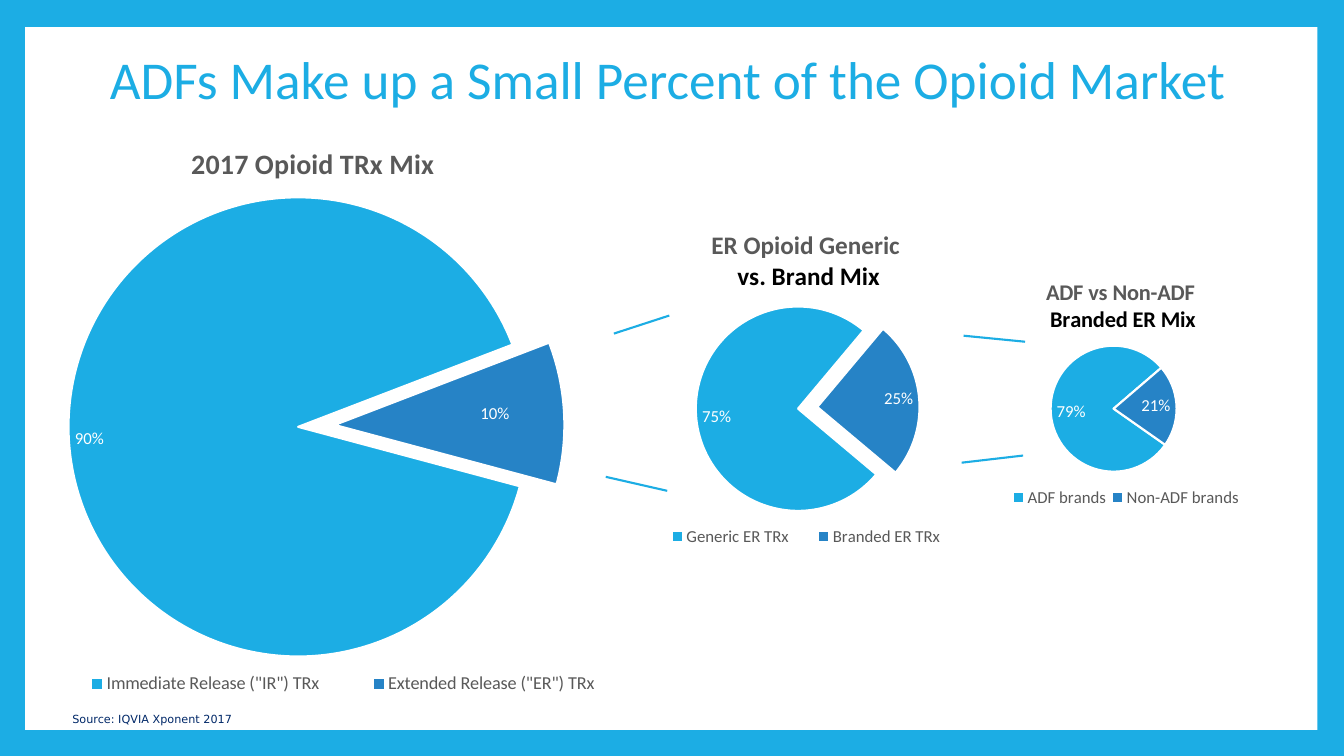
from pptx import Presentation
from pptx.chart.data import CategoryChartData as Data
from pptx.dml.color import RGBColor as Rgb
from pptx.enum.chart import XL_CHART_TYPE as Kind
from pptx.enum.chart import XL_LABEL_POSITION as Spot
from pptx.enum.chart import XL_LEGEND_POSITION as Side
from pptx.enum.shapes import MSO_CONNECTOR as Conn
from pptx.enum.shapes import MSO_SHAPE as Form
from pptx.enum.text import MSO_ANCHOR as Anchor
from pptx.enum.text import PP_ALIGN as Align
from pptx.oxml import parse_xml
from pptx.oxml.ns import nsdecls, qn
from pptx.util import Pt

HUES = {"sky": "1CADE4", "blue": "2683C6", "white": "FFFFFF",
        "grey": "595959", "black": "000000", "navy": "002868"}

# box: chart frame; mid, half: centre and radius of the pie;
# head, key: corner of the title and frame of the legend
PIES = [
    dict(box=(-22.3, 62.6, 496, 465.8), mid=(213, 305), half=164,
         head=(133, 99), key=(31, 477, 428, 23), key_size=13,
         title=["2017 Opioid TRx Mix"], size=20, start=105, burst=16,
         shift=-0.07, vals=(0.9, 0.1),
         cats=('Immediate Release ("IR") TRx', 'Extended Release ("ER") TRx')),
    dict(box=(443.5, 136.1, 254.2, 276.5), mid=(570, 292), half=73,
         head=(506, 161), key=(463, 373, 226, 21), key_size=12,
         title=["ER Opioid Generic ", "vs. Brand Mix"], size=18, start=130,
         burst=19, shift=0, vals=(0.75, 0.25),
         cats=("Generic ER TRx", "Branded ER TRx")),
    dict(box=(702, 182.9, 212.4, 189.4), mid=(795.5, 292), half=45,
         head=(745, 196), key=(719.5, 346, 170, 19), key_size=12,
         title=["ADF vs Non-ADF ", "Branded ER Mix"], size=16, start=125,
         burst=0, shift=0, vals=(0.79, 0.21),
         cats=("ADF brands", "Non-ADF brands")),
]

LINKS = [(438.5, 238.3, 478.1, 225.4), (432.7, 340.6, 476.6, 350.6),
         (688.3, 239.8, 732.2, 244.1), (686.9, 330.5, 730.8, 325.4)]


def rgb(name):
    return Rgb.from_string(HUES[name])


def style(font, hue, **form):
    font.color.rgb = rgb(hue)
    for key, val in {"name": "Calibri", **form}.items():
        setattr(font, key, val)


def tag(name, val):
    return parse_xml(f'<c:{name} {nsdecls("c")} val="{val}"/>')


def layout(marks):
    body = "".join(f'<c:{key} val="{val}"/>' for key, val in marks)
    return parse_xml(f'<c:layout {nsdecls("c")}><c:manualLayout>{body}'
                     "</c:manualLayout></c:layout>")


def place(part, box, area, after=None):
    """Fix a chart part at a slide area, given as fractions of the frame."""
    left, top, width, height = box
    marks = [("xMode", "edge"), ("yMode", "edge"),
             ("x", round((area[0] - left) / width, 4)),
             ("y", round((area[1] - top) / height, 4))]
    if len(area) == 4:
        marks += [("w", round(area[2] / width, 4)),
                  ("h", round(area[3] / height, 4))]
    if after is None:
        marks.insert(0, ("layoutTarget", "inner"))
    for old in part.findall(qn("c:layout")):
        part.remove(old)
    if after is None:
        part.insert(0, layout(marks))
    else:
        part.find(qn(after)).addnext(layout(marks))


def add_head(chart, pie):
    frame = chart.chart_title.text_frame
    for num, line in enumerate(pie["title"]):
        para = frame.add_paragraph() if num else frame.paragraphs[0]
        run = para.add_run()
        run.text = line
        style(run.font, "black" if num else "grey",
              size=Pt(pie["size"]), bold=True)
    chart.chart_title.include_in_layout = False


def add_key(chart, pie):
    chart.has_legend = True
    chart.legend.position = Side.BOTTOM
    chart.legend.include_in_layout = False
    style(chart.legend.font, "grey", size=Pt(pie["key_size"]))


def paint(series, pie):
    for num, hue in enumerate(("sky", "blue")):
        look = series.points[num].format
        look.fill.solid()
        look.fill.fore_color.rgb = rgb(hue)
        look.line.color.rgb = rgb("white")
        look.line.width = Pt(1.5)
    if pie["burst"]:
        slot = series._element.findall(qn("c:dPt"))[1]
        slot.find(qn("c:spPr")).addprevious(tag("explosion", pie["burst"]))


def add_tags(series, pie):
    tags = series.data_labels
    for key, val in dict(show_value=True, number_format="0%",
                         number_format_is_linked=False,
                         position=Spot.INSIDE_END).items():
        setattr(tags, key, val)
    style(tags.font, "white", size=Pt(12))
    if pie["shift"]:
        note = series.points[1].data_label
        note.position = Spot.INSIDE_END
        style(note.font, "white", size=Pt(12))
        index = series._element.find(".//" + qn("c:dLbl")).find(qn("c:idx"))
        index.addnext(parse_xml(f'<c:numFmt {nsdecls("c")} formatCode="0%" '
                                'sourceLinked="0"/>'))
        index.addnext(layout([("x", pie["shift"]), ("y", 0)]))


def add_pie(slide, pie):
    data = Data(number_format="0%")
    data.categories = pie["cats"]
    data.add_series("Series 1", pie["vals"])
    box = pie["box"]
    chart = slide.shapes.add_chart(Kind.PIE, *map(Pt, box), data).chart
    style(chart.font, "black", size=Pt(12))
    add_head(chart, pie)
    add_key(chart, pie)
    plot = chart.plots[0]
    plot.vary_by_categories = True
    paint(plot.series[0], pie)
    add_tags(plot.series[0], pie)

    root = chart._chartSpace
    ring = root.find(".//" + qn("c:pieChart"))
    for old in ring.findall(qn("c:firstSliceAng")):
        ring.remove(old)
    ring.append(tag("firstSliceAng", pie["start"]))
    half = pie["half"]
    area = [val - half for val in pie["mid"]] + [2 * half] * 2
    place(root.find(".//" + qn("c:plotArea")), box, area)
    place(root.find(".//" + qn("c:title")), box, pie["head"], "c:tx")
    place(root.find(".//" + qn("c:legend")), box, pie["key"], "c:legendPos")


def add_panel(slide):
    panel = slide.shapes.add_shape(Form.RECTANGLE, *map(Pt, (18, 19.4, 923, 502)))
    panel.shadow.inherit = False
    panel.fill.solid()
    panel.fill.fore_color.rgb = rgb("white")
    panel.line.fill.background()
    slide.shapes._spTree.insert(2, panel._element)


def set_title(slide, text):
    title = slide.shapes.title
    spots = zip(("left", "top", "width", "height"), (71.3, 5.8, 823.7, 106.6))
    for key, val in spots:
        setattr(title, key, Pt(val))
    frame = title.text_frame
    frame.text = text
    frame.vertical_anchor = Anchor.MIDDLE
    para = frame.paragraphs[0]
    para.alignment = Align.LEFT
    para.line_spacing = 0.9
    style(para.runs[0].font, "sky", size=Pt(38))


def add_source(slide, text):
    frame = slide.shapes.add_textbox(*map(Pt, (44.6, 504.7, 270, 16.6))).text_frame
    for key, val in dict(word_wrap=True, vertical_anchor=Anchor.BOTTOM,
                         margin_top=Pt(3), margin_bottom=Pt(3)).items():
        setattr(frame, key, val)
    frame.text = text
    style(frame.paragraphs[0].runs[0].font, "navy", name="DejaVu Sans", size=Pt(8))


def add_link(slide, ends):
    link = slide.shapes.add_connector(Conn.STRAIGHT, *map(Pt, ends))
    link.line.color.rgb = rgb("sky")
    link.line.width = Pt(1.5)
    link._element.spPr.append(parse_xml(f'<a:effectLst {nsdecls("a")}/>'))


def main():
    deck = Presentation()
    deck.slide_width, deck.slide_height = Pt(960), Pt(540)
    slide = deck.slides.add_slide(deck.slide_layouts[5])
    slide.background.fill.solid()
    slide.background.fill.fore_color.rgb = rgb("sky")
    add_panel(slide)
    set_title(slide, "ADFs Make up a Small Percent of the Opioid Market")
    for pie in PIES:
        add_pie(slide, pie)
    for ends in LINKS:
        add_link(slide, ends)
    add_source(slide, "Source: IQVIA Xponent 2017")
    deck.save("out.pptx")


if __name__ == "__main__":
    main()
